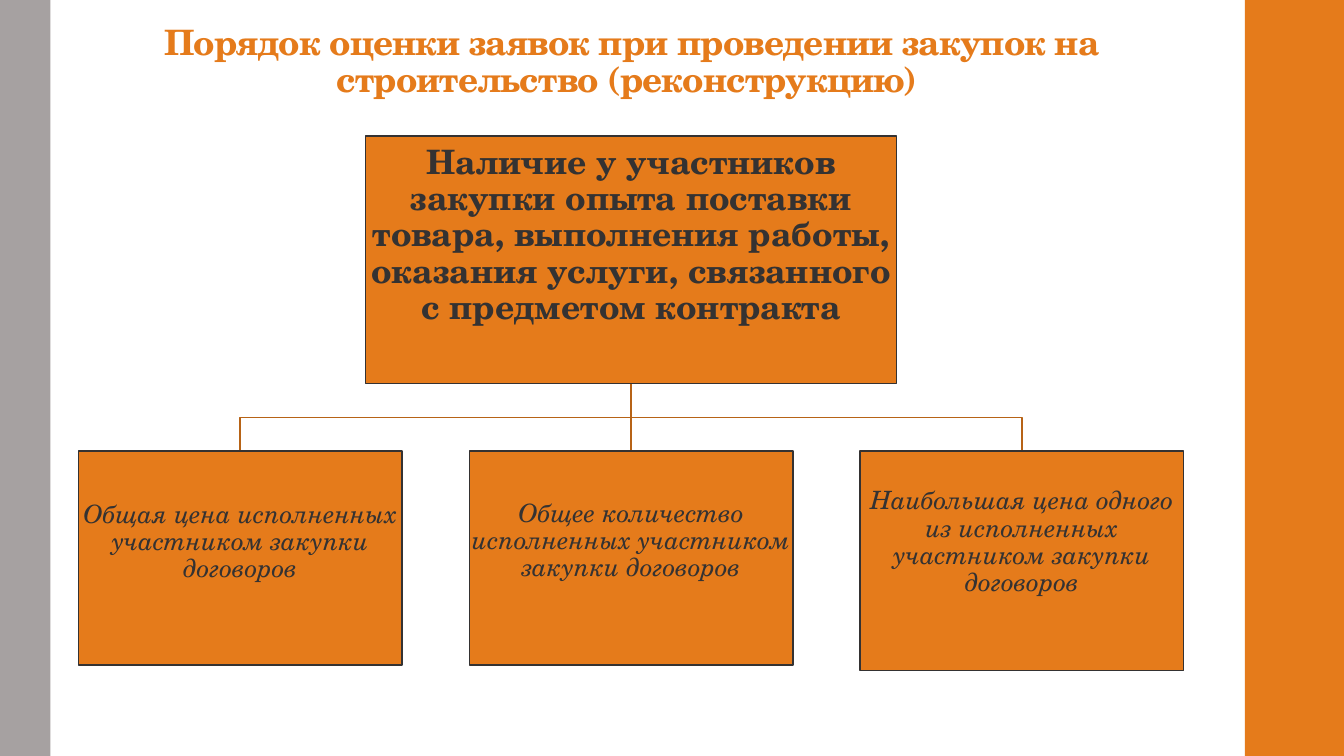
"""Build a slide on how construction bids are scored."""
from pptx import Presentation
from pptx.dml.color import RGBColor
from pptx.enum import shapes, text
from pptx.util import Cm, Pt

ORANGE = RGBColor(0xE5, 0x7B, 0x1B)
GREY = RGBColor(0xA6, 0xA1, 0xA1)
DARK = RGBColor(0x34, 0x32, 0x32)
RUST = RGBColor(0xB7, 0x63, 0x16)
FONT = "TeX Gyre Schola"
WIDE, HIGH = 33.87, 19.05

TITLE = "Порядок оценки заявок при проведении закупок на строительство (реконструкцию) "
ROOT = ("Наличие у участников закупки опыта поставки товара, выполнения работы, "
        "оказания услуги, связанного с предметом контракта")
LEAVES = [
    ("Общая цена исполненных участником закупки договоров", 5.39, 0.84),
    ("Общее количество исполненных участником закупки договоров", 5.39, 0.87),
    ("Наибольшая цена одного из исполненных участником закупки договоров", 5.53, 0.96),
]


def write(frame, words, size, color, pads, bold=False, slant=False):
    frame.word_wrap = True
    frame.auto_size = text.MSO_AUTO_SIZE.NONE
    (frame.margin_left, frame.margin_top,
     frame.margin_right, frame.margin_bottom) = map(Cm, pads)
    para = frame.paragraphs[0]
    para.alignment = text.PP_ALIGN.CENTER
    para.line_spacing = 0.9
    run = para.add_run()
    run.text = words
    font = run.font
    font.name, font.size = FONT, Pt(size)
    font.bold, font.italic = bold, slant
    font.color.rgb = color
    return run


def block(slide, area, fill, edge=None):
    rect = slide.shapes.add_shape(shapes.MSO_SHAPE.RECTANGLE, *map(Cm, area))
    rect.shadow.inherit = False
    rect.fill.solid()
    rect.fill.fore_color.rgb = fill
    if edge is None:
        rect.line.fill.background()
    else:
        rect.line.color.rgb = edge
        rect.line.width = Pt(1.1)
    return rect


def node(slide, area, words, size, pad, low, **style):
    rect = block(slide, area, ORANGE, DARK)
    rect.text_frame.vertical_anchor = text.MSO_ANCHOR.MIDDLE
    write(rect.text_frame, words, size, DARK, (pad, pad, pad, low), **style)


def link(slide, points):
    first, *rest = [(Cm(x), Cm(y)) for x, y in points]
    pen = slide.shapes.build_freeform(*first)
    pen.add_line_segments(rest, close=False)
    line = pen.convert_to_shape()
    line.shadow.inherit = False
    line.fill.background()
    line.line.color.rgb = RUST
    line.line.width = Pt(1.1)


def head(slide):
    title = slide.shapes.title
    title.left, title.top, title.width, title.height = map(Cm, (3.43, 1.11, 24.97, 1.55))
    title.text_frame.vertical_anchor = text.MSO_ANCHOR.BOTTOM
    run = write(title.text_frame, TITLE, 25, ORANGE, (0.25, 0.08, 0.25, 0.13), bold=True)
    run._r.get_or_add_rPr().set("spc", "-50")


def tree(slide):
    left, step, width = 1.98, 9.85, 8.15
    base, bar, top = 9.66, 10.52, 11.37
    mids = [left + step * i + width / 2 for i in range(len(LEAVES))]
    hub = mids[1]
    for mid in reversed(mids):
        bend = [] if mid == hub else [(hub, bar), (mid, bar)]
        link(slide, [(hub, base), *bend, (mid, top)])
    node(slide, (9.21, 3.43, 13.39, base - 3.43), ROOT, 24, 0.05, 1.25, bold=True)
    for mid, (words, tall, low) in zip(mids, LEAVES):
        node(slide, (mid - width / 2, top, width, tall), words, 18, 0.03, low, slant=True)


def main():
    deck = Presentation()
    deck.slide_width, deck.slide_height = Cm(WIDE), Cm(HIGH)
    slide = deck.slides.add_slide(deck.slide_layouts[5])
    block(slide, (31.37, 0, WIDE - 31.37, HIGH), ORANGE)
    block(slide, (0, 0, 1.27, HIGH), GREY)
    head(slide)
    tree(slide)
    deck.save("out.pptx")


if __name__ == "__main__":
    main()
